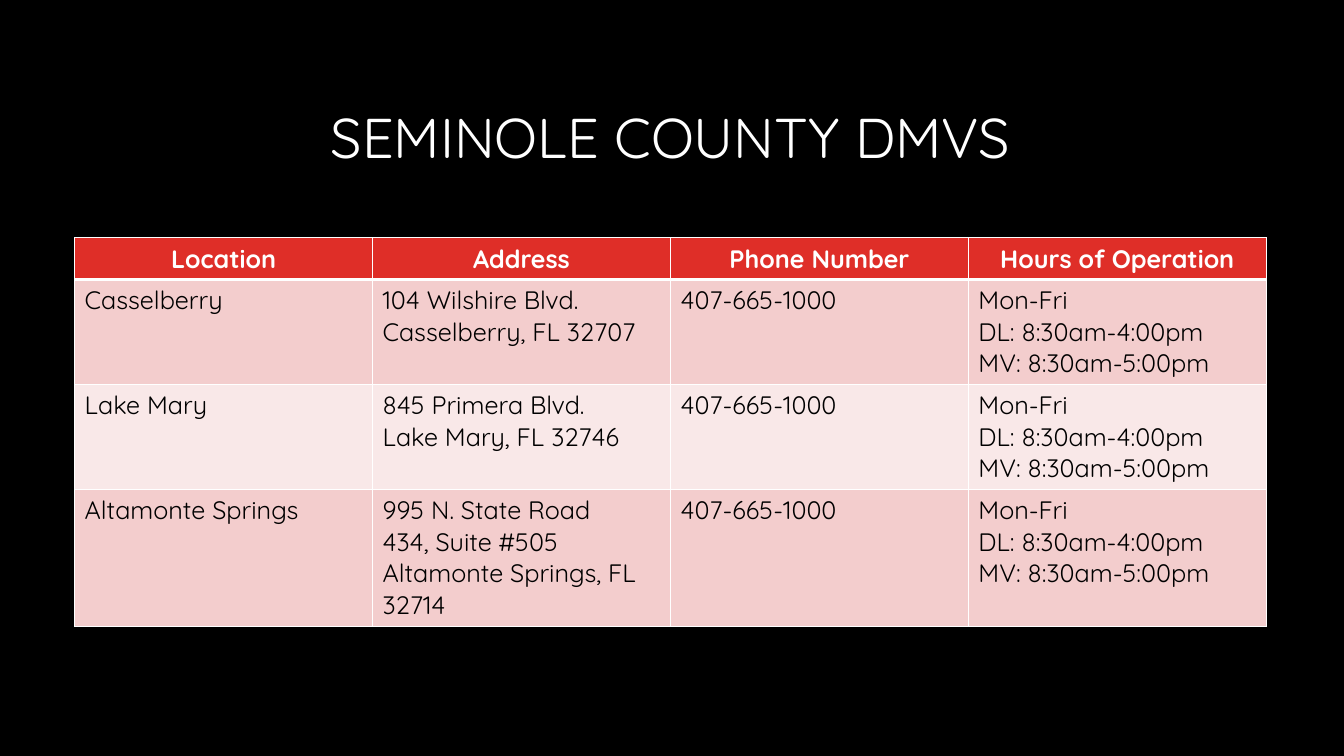
from dataclasses import dataclass

from lxml import etree
from pptx import Presentation
from pptx.dml.color import RGBColor
from pptx.enum.text import MSO_ANCHOR, PP_ALIGN
from pptx.oxml.ns import qn
from pptx.slide import Slide
from pptx.table import _Cell
from pptx.text.text import TextFrame
from pptx.util import Inches, Pt

CENTER = PP_ALIGN.CENTER
LEFT = PP_ALIGN.LEFT
MIDDLE = MSO_ANCHOR.MIDDLE

FONT = "Quicksand"
COLORS = {
    "background": "000000",
    "light_text": "FFFFFF",
    "dark_text": "000000",
    "border": "FFFFFF",
    "header": "DF2E28",
    "odd_row": "F3CDCD",
    "even_row": "F9E8E8",
}
MARGIN, CONTENT_WIDTH = 0.74, 11.82
HEADINGS = ("Location", "Address", "Phone Number", "Hours of Operation")
PHONE = "407-665-1000"
HOURS = "Mon-Fri\nDL: 8:30am-4:00pm\nMV: 8:30am-5:00pm"
HEADER_HEIGHT = 0.41
THIN, THICK = 1, 3


@dataclass
class Office:
    location: str
    address: str
    row_height: float


OFFICES = [
    Office("Casselberry", "104 Wilshire Blvd.\nCasselberry, FL 32707", 1.04),
    Office("Lake Mary", "845 Primera Blvd.\nLake Mary, FL 32746", 1.04),
    Office(
        "Altamonte Springs",
        "995 N. State Road\n434, Suite #505\nAltamonte Springs, FL 32714",
        1.36,
    ),
]


def rgb(name: str) -> RGBColor:
    return RGBColor.from_string(COLORS[name])


def format_text(
    frame: TextFrame, size: int, color: str, align: PP_ALIGN, bold: bool = False
) -> None:
    for paragraph in frame.paragraphs:
        paragraph.alignment = align
        for run in paragraph.runs:
            run.font.name = FONT
            run.font.size = Pt(size)
            run.font.bold = bold
            run.font.color.rgb = rgb(color)


def add_borders(cell: _Cell, top: int, bottom: int) -> None:
    properties = cell._tc.get_or_add_tcPr()
    widths = {"a:lnL": THIN, "a:lnR": THIN, "a:lnT": top, "a:lnB": bottom}
    for tag, width in widths.items():
        border = etree.SubElement(properties, qn(tag), w=str(Pt(width)))
        fill = etree.SubElement(border, qn("a:solidFill"))
        etree.SubElement(fill, qn("a:srgbClr"), val=COLORS["border"])


def add_title(slide: Slide) -> None:
    title = slide.shapes.title
    title.left, title.top = Inches(MARGIN), Inches(0.67)
    title.width, title.height = Inches(CONTENT_WIDTH), Inches(1.44)
    frame = title.text_frame
    frame.text = "SEMINOLE COUNTY DMVS"
    frame.vertical_anchor = MIDDLE
    frame.paragraphs[0].line_spacing = 0.9
    format_text(frame, 40, "light_text", CENTER)


def add_office_table(slide: Slide) -> None:
    rows = [HEADINGS] + [(o.location, o.address, PHONE, HOURS) for o in OFFICES]
    heights = [HEADER_HEIGHT] + [o.row_height for o in OFFICES]
    table = slide.shapes.add_table(
        len(rows), len(HEADINGS), Inches(MARGIN), Inches(2.36),
        Inches(CONTENT_WIDTH), Inches(sum(heights)),
    ).table
    for row_index, (texts, height) in enumerate(zip(rows, heights)):
        table.rows[row_index].height = Inches(height)
        is_header = row_index == 0
        band = "header" if is_header else "odd_row" if row_index % 2 else "even_row"
        for column_index, text in enumerate(texts):
            cell = table.cell(row_index, column_index)
            cell.text_frame.text = text
            format_text(
                cell.text_frame, 18,
                "light_text" if is_header else "dark_text",
                CENTER if is_header else LEFT,
                is_header,
            )
            add_borders(
                cell,
                THICK if row_index == 1 else THIN,
                THICK if is_header else THIN,
            )
            cell.fill.solid()
            cell.fill.fore_color.rgb = rgb(band)


def main() -> None:
    presentation = Presentation()
    presentation.slide_width = Inches(13.33)
    presentation.slide_height = Inches(7.5)
    slide = presentation.slides.add_slide(presentation.slide_layouts[5])
    slide.background.fill.solid()
    slide.background.fill.fore_color.rgb = rgb("background")
    add_title(slide)
    add_office_table(slide)
    presentation.save("out.pptx")


if __name__ == "__main__":
    main()
